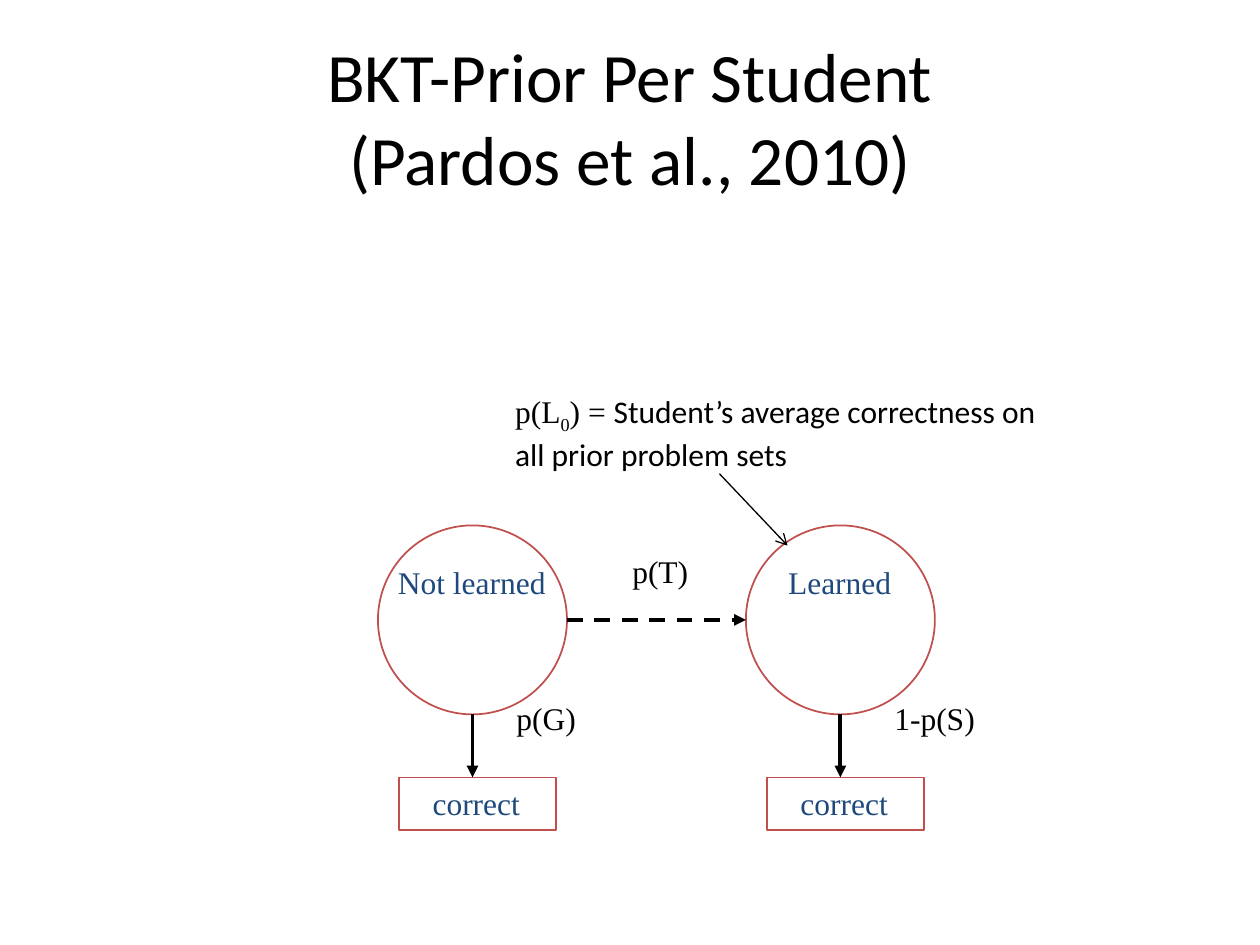
from pptx import Presentation
from pptx.dml.color import RGBColor
from pptx.enum import dml, shapes, text
from pptx.oxml import ns
from pptx.util import Inches, Pt
from lxml import etree

BLACK = RGBColor(0, 0, 0)
RED = RGBColor(0xC0, 0x50, 0x4D)
NAVY = RGBColor(0x1F, 0x49, 0x7D)
SERIF, SANS = "Times New Roman", "Calibri"

# Content: one knowledge state per column
TITLE = "BKT-Prior Per Student\v(Pardos et al., 2010)"
STATES = [  # centre x, state, outcome, emission label, its left and width
    (3.75, "Not learned", "correct", "p(G)", 4, 0.75),
    (6.67, "Learned", "correct", "1-p(S)", 7, 1.17),
]
PRIOR = [  # text, font, baseline shift in percent
    ("p(L", SERIF, 0),
    ("0", SERIF, -25),
    (") = ", SERIF, 0),
    ("Student’s average correctness on all prior problem sets", SANS, 0),
]

# Layout in inches
CIRCLE_TOP, DIAMETER = 4.17, 1.5
BOX_TOP, BOX_WIDTH, BOX_HEIGHT = 6.17, 1.25, 0.42
RADIUS = DIAMETER / 2
MIDDLE = CIRCLE_TOP + RADIUS

presentation = Presentation()
presentation.slide_width, presentation.slide_height = Inches(10), Inches(7.5)
slide = presentation.slides.add_slide(presentation.slide_layouts[6])


def add_text(content, left, top, width, height=0.4, size=18, font=SERIF,
             color=BLACK, centred=False, middle=False):
    """Add a text box; content is a string or a list of (text, font, baseline)."""
    box = slide.shapes.add_textbox(*map(Inches, (left, top, width, height)))
    frame = box.text_frame
    frame.word_wrap = True
    frame.vertical_anchor = text.MSO_ANCHOR.MIDDLE if middle else text.MSO_ANCHOR.TOP
    paragraph = frame.paragraphs[0]
    paragraph.alignment = text.PP_ALIGN.CENTER if centred else text.PP_ALIGN.LEFT
    if isinstance(content, str):
        paragraph.text = content
        parts = [(run, font, 0) for run in paragraph.runs]
    else:
        parts = []
        for words, face, baseline in content:
            run = paragraph.add_run()
            run.text = words
            parts.append((run, face, baseline))
    paragraph.font.size = Pt(size)
    for run, face, baseline in parts:
        run.font.name, run.font.size = face, Pt(size)
        run.font.color.rgb = color
        if baseline:
            run.font._element.set("baseline", str(baseline * 1000))


def add_outline(kind, left, top, width, height):
    shape = slide.shapes.add_shape(kind, *map(Inches, (left, top, width, height)))
    shape.shadow.inherit = False
    shape.fill.background()
    shape.line.color.rgb = RED
    shape.line.width = Pt(1)


def add_arrow(start, end, width=2.25, head="triangle", dashed=False):
    arrow = slide.shapes.add_connector(
        shapes.MSO_CONNECTOR.STRAIGHT, *map(Inches, (*start, *end)))
    arrow.line.color.rgb = BLACK
    arrow.line.width = Pt(width)
    if dashed:
        arrow.line.dash_style = dml.MSO_LINE.DASH
    etree.SubElement(arrow.line._get_or_add_ln(), ns.qn("a:tailEnd"), type=head)
    etree.SubElement(arrow._element.spPr, ns.qn("a:effectLst"))


# Title
add_text(TITLE, 0.5, 0.3, 9, 1.25, size=39.6, font=SANS, centred=True, middle=True)

# States with their outcomes
for center, state, outcome, label, label_left, label_width in STATES:
    box_left = center - BOX_WIDTH / 2 + 0.04
    add_outline(shapes.MSO_SHAPE.OVAL, center - RADIUS, CIRCLE_TOP, DIAMETER, DIAMETER)
    add_text(state, center - 0.92, 4.42, 1.83, color=NAVY, centred=True)
    add_outline(shapes.MSO_SHAPE.RECTANGLE, box_left, BOX_TOP, BOX_WIDTH, BOX_HEIGHT)
    add_text(outcome, box_left + 0.17, BOX_TOP, 1.17, color=NAVY)
    add_arrow((center, CIRCLE_TOP + DIAMETER), (center, BOX_TOP))
    add_text(label, label_left, 5.5, label_width)

# Transition between the states
add_arrow((STATES[0][0] + RADIUS, MIDDLE), (STATES[1][0] - RADIUS, MIDDLE), dashed=True)
add_text("p(T)", 4.92, 4.33, 0.67)

# Prior knowledge note
add_text(PRIOR, 3.99, 3.06, 4.34, 0.71)
add_arrow((5.71, 3.76), (6.25, 4.33), width=0.75, head="arrow")

presentation.save("out.pptx")
